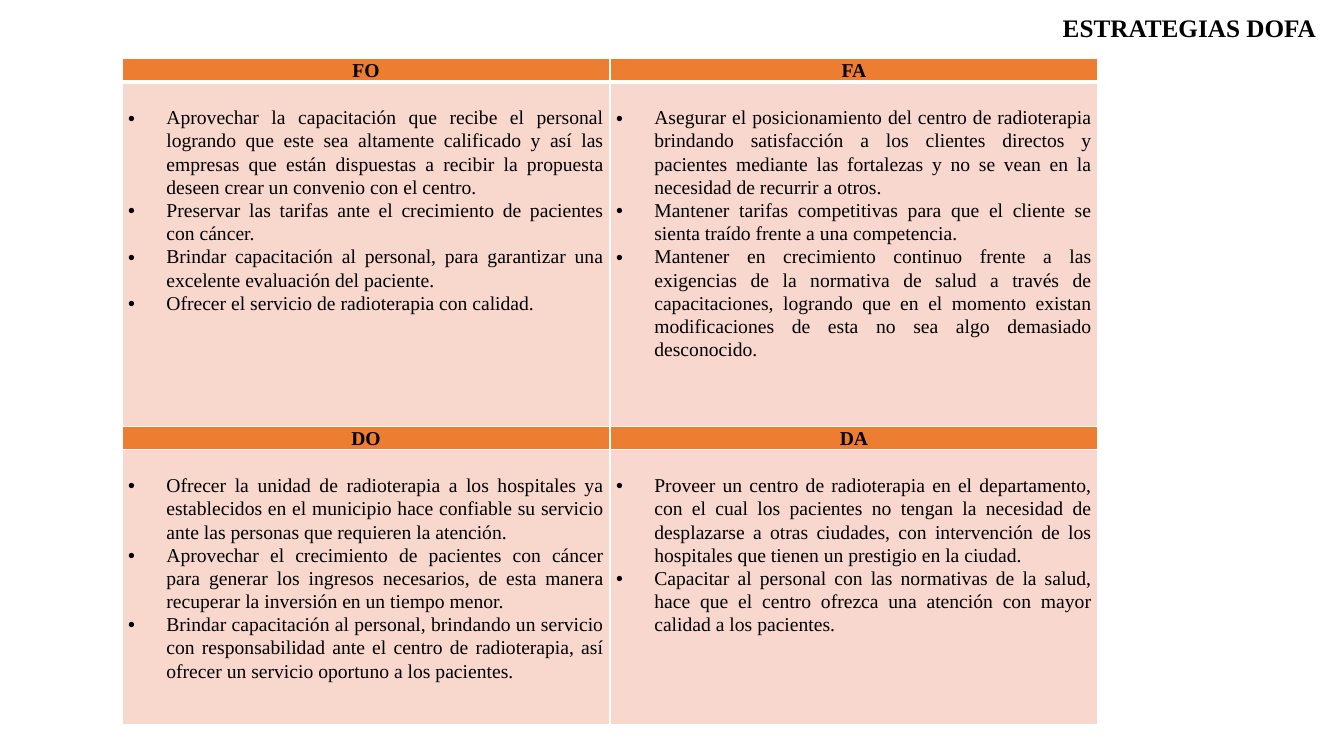
"""Build the DOFA strategies slide: a title and a two-by-two table of strategies."""
from dataclasses import dataclass

import lxml.etree
import pptx
import pptx.dml.color
import pptx.enum.text
import pptx.oxml.ns
import pptx.table
import pptx.text.text
import pptx.util

Align = pptx.enum.text.PP_ALIGN
Anchor = pptx.enum.text.MSO_ANCHOR
WIDE = pptx.util.Inches(13.33)
HIGH = pptx.util.Inches(7.5)


@dataclass(frozen=True)
class Theme:
    font: str = "Times New Roman"
    ink: str = "000000"
    line: str = "FFFFFF"
    head: str = "ED7D31"
    body: tuple[str, str] = ("F8D7CD", "F8D7CE")
    title: int = 18
    text: int = 14
    pitch: float = 1.07
    thin: int = 1
    thick: int = 3


@dataclass(frozen=True)
class Box:
    left: float
    top: float
    width: float
    height: float


@dataclass(frozen=True)
class Group:
    name: str
    items: tuple[str, ...]


THEME = Theme()
TITLE = Box(78.32, 0, 21.68, 7.73)
ROWS = (3.07, 45.6, 3.07, 36.4)
TABLE = Box(9.08, 7.73, 72.62, sum(ROWS))
SIDE = 0.45
DROP = 3.2
HANG = 2.85

GROUPS = (
    Group("FO", (
        "Aprovechar la capacitación que recibe el personal logrando que este sea altamente calificado "
        "y así las empresas que están dispuestas a recibir la propuesta deseen crear un convenio con el centro.",
        "Preservar las tarifas ante el crecimiento de pacientes con cáncer.",
        "Brindar capacitación al personal, para garantizar una excelente evaluación del paciente.",
        "Ofrecer el servicio de radioterapia con calidad.",
    )),
    Group("FA", (
        "Asegurar el posicionamiento del centro de radioterapia brindando satisfacción a los clientes directos "
        "y pacientes mediante las fortalezas y no se vean en la necesidad de recurrir a otros.",
        "Mantener tarifas competitivas para que el cliente se sienta traído frente a una competencia.",
        "Mantener en crecimiento continuo frente a las exigencias de la normativa de salud a través de "
        "capacitaciones, logrando que en el momento existan modificaciones de esta no sea algo demasiado "
        "desconocido.",
    )),
    Group("DO", (
        "Ofrecer la unidad de radioterapia a los hospitales ya establecidos en el municipio hace confiable "
        "su servicio ante las personas que requieren la atención.",
        "Aprovechar el crecimiento de pacientes con cáncer para generar los ingresos necesarios, de esta "
        "manera recuperar la inversión en un tiempo menor.",
        "Brindar capacitación al personal, brindando un servicio con responsabilidad ante el centro de "
        "radioterapia, así ofrecer un servicio oportuno a los pacientes.",
    )),
    Group("DA", (
        "Proveer un centro de radioterapia en el departamento, con el cual los pacientes no tengan la "
        "necesidad de desplazarse a otras ciudades, con intervención de los hospitales que tienen un "
        "prestigio en la ciudad.",
        "Capacitar al personal con las normativas de la salud, hace que el centro ofrezca una atención "
        "con mayor calidad a los pacientes.",
    )),
)


def across(share: float) -> int:
    return round(WIDE * share / 100)


def down(share: float) -> int:
    return round(HIGH * share / 100)


def frame(box: Box) -> tuple[int, int, int, int]:
    return across(box.left), down(box.top), across(box.width), down(box.height)


def color(code: str) -> pptx.dml.color.RGBColor:
    return pptx.dml.color.RGBColor.from_string(code)


def write(para: pptx.text.text._Paragraph, text: str, size: int, bold: bool) -> None:
    run = para.add_run()
    run.text = text
    run.font.name = THEME.font
    run.font.size = pptx.util.Pt(size)
    run.font.bold = bold
    run.font.color.rgb = color(THEME.ink)


def bullet(para: pptx.text.text._Paragraph) -> None:
    props = para._p.get_or_add_pPr()
    props.set("marL", str(across(HANG)))
    props.set("indent", str(-across(HANG)))
    face = lxml.etree.SubElement(props, pptx.oxml.ns.qn("a:buFont"))
    face.set("typeface", "Arial")
    mark = lxml.etree.SubElement(props, pptx.oxml.ns.qn("a:buChar"))
    mark.set("char", "•")


def edge(cell: pptx.table._Cell, side: str, width: int) -> None:
    props = cell._tc.get_or_add_tcPr()
    line = lxml.etree.SubElement(props, pptx.oxml.ns.qn(f"a:ln{side}"))
    line.set("w", str(pptx.util.Pt(width)))
    fill = lxml.etree.SubElement(line, pptx.oxml.ns.qn("a:solidFill"))
    lxml.etree.SubElement(fill, pptx.oxml.ns.qn("a:srgbClr")).set("val", THEME.line)


def style(cell: pptx.table._Cell, fill: str, top: float, heavy: str) -> None:
    for side in "LRTB":
        edge(cell, side, THEME.thick if side == heavy else THEME.thin)
    cell.fill.solid()
    cell.fill.fore_color.rgb = color(fill)
    cell.margin_left = cell.margin_right = across(SIDE)
    cell.margin_top, cell.margin_bottom = down(top), 0
    cell.vertical_anchor = Anchor.TOP


def place(grid: pptx.table.Table, spot: int, group: Group) -> None:
    band, col = divmod(spot, 2)
    row = 2 * band
    head, body = grid.cell(row, col), grid.cell(row + 1, col)
    style(head, THEME.head, 0, "" if band else "B")
    style(body, THEME.body[col], DROP, "" if band else "T")
    para = head.text_frame.paragraphs[0]
    para.alignment = Align.CENTER
    para.line_spacing = THEME.pitch
    write(para, group.name, THEME.text, True)
    for rank, item in enumerate(group.items):
        para = body.text_frame.add_paragraph() if rank else body.text_frame.paragraphs[0]
        bullet(para)
        para.alignment = Align.JUSTIFY
        para.line_spacing = THEME.pitch
        write(para, item, THEME.text, False)


def main() -> None:
    deck = pptx.Presentation()
    deck.slide_width, deck.slide_height = WIDE, HIGH
    slide = deck.slides.add_slide(deck.slide_layouts[5])

    title = slide.shapes.title
    title.left, title.top, title.width, title.height = frame(TITLE)
    text = title.text_frame
    text.word_wrap = True
    text.auto_size = pptx.enum.text.MSO_AUTO_SIZE.NONE
    text.vertical_anchor = Anchor.MIDDLE
    para = text.paragraphs[0]
    para.alignment = Align.LEFT
    para.line_spacing = 0.9
    write(para, "ESTRATEGIAS DOFA", THEME.title, True)

    grid = slide.shapes.add_table(len(ROWS), 2, *frame(TABLE)).table
    for row, share in zip(grid.rows, ROWS):
        row.height = down(share)
    for spot, group in enumerate(GROUPS):
        place(grid, spot, group)
    deck.save("out.pptx")


if __name__ == "__main__":
    main()
